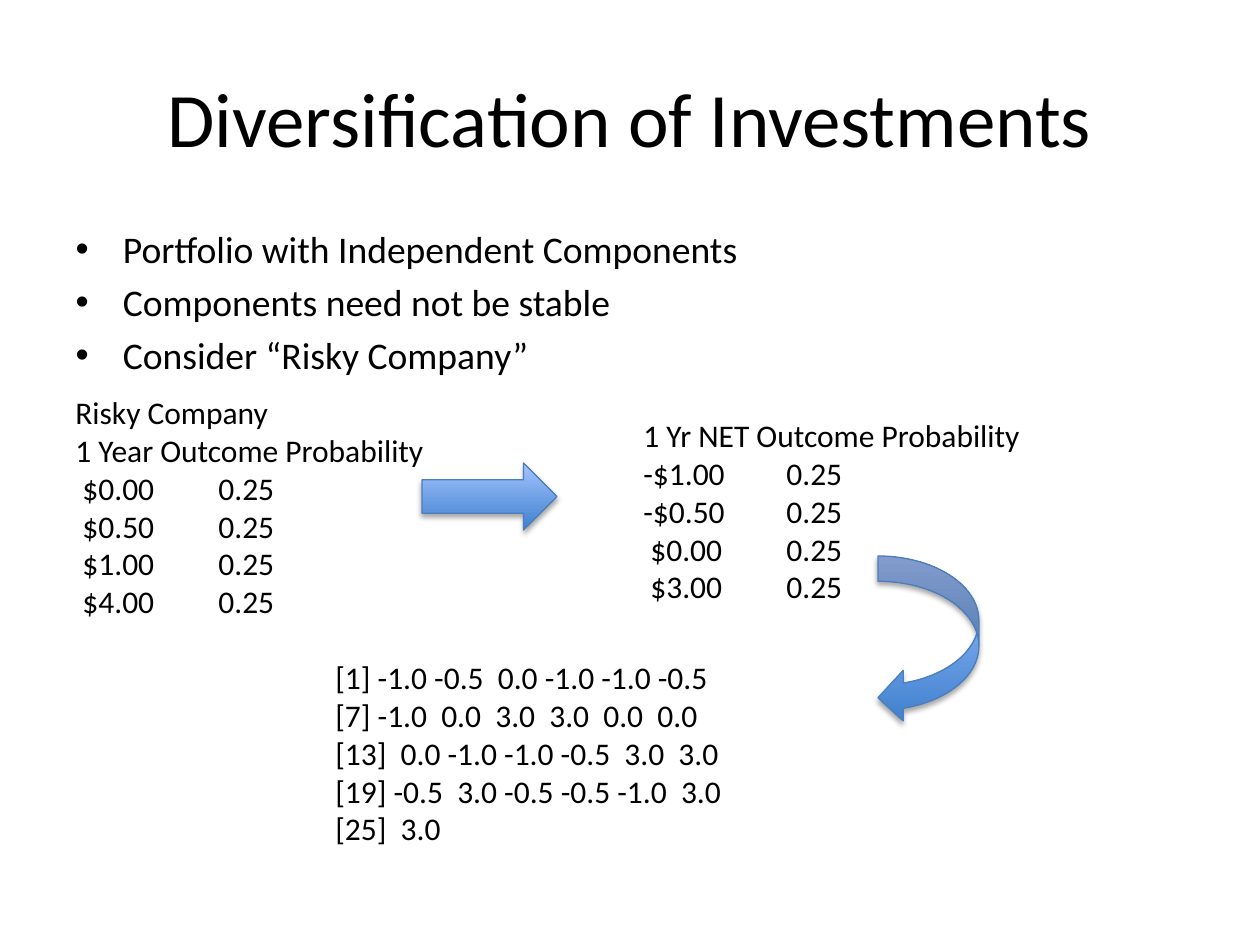
from lxml.etree import SubElement
from pptx import Presentation
from pptx.dml.color import RGBColor
from pptx.enum.shapes import MSO_SHAPE as SHAPE
from pptx.enum.text import MSO_AUTO_SIZE as AUTO
from pptx.oxml.ns import qn
from pptx.util import Emu, Pt

FONT, BLACK = "Calibri", "000000"
ARROW_LIGHT, ARROW_DARK, ARROW_LINE = "A4C4FF", "3F80CE", "4B7EBC"
TAB_POS = 143  # probability column, from the text's left edge

TITLE = "Diversification of Investments"
BULLETS = [
    "Portfolio with Independent Components",
    "Components need not be stable",
    "Consider “Risky Company”",
]
# left, top, width, height in px, then the lines
TEXTS = [
    ((63, 387, 377, 280), [
        "Risky Company",
        "1 Year Outcome Probability",
        " $0.00\t0.25",
        " $0.50\t0.25",
        " $1.00\t0.25",
        " $4.00\t0.25",
    ]),
    ((631, 410, 406, 242), [
        "1 Yr NET Outcome Probability",
        "-$1.00\t0.25",
        "-$0.50\t0.25",
        " $0.00\t0.25",
        " $3.00\t0.25",
    ]),
    ((323, 652, 416, 242), [
        "[1] -1.0 -0.5  0.0 -1.0 -1.0 -0.5",
        "[7] -1.0  0.0  3.0  3.0  0.0  0.0",
        "[13]  0.0 -1.0 -1.0 -0.5  3.0  3.0",
        "[19] -0.5  3.0 -0.5 -0.5 -1.0  3.0",
        "[25]  3.0",
    ]),
]
ARROWS = [
    (SHAPE.RIGHT_ARROW, (422, 463, 135, 67)),
    (SHAPE.CURVED_LEFT_ARROW, (878, 556, 101, 167)),
]


def px(n):
    return Emu(round(n * 914400 / 126))


def rgb(value):
    return RGBColor.from_string(value)


def place(sp, box):
    sp.left, sp.top, sp.width, sp.height = map(px, box)


def write(tf, lines, size):
    """Fill a text frame with one paragraph per line."""
    tf.word_wrap = True
    tf.auto_size = AUTO.NONE
    for i, line in enumerate(lines):
        p = tf.paragraphs[0] if i == 0 else tf.add_paragraph()
        p.text = line
        if "\t" in line:
            tabs = SubElement(p._p.get_or_add_pPr(), qn("a:tabLst"))
            SubElement(tabs, qn("a:tab"), pos=str(px(TAB_POS)), algn="l")
        p.font.name, p.font.size = FONT, Pt(size)
        p.font.color.rgb = rgb(BLACK)
    tf.paragraphs[0].space_before = Pt(0)


def add_arrow(shapes, kind, box):
    sp = shapes.add_shape(kind, *map(px, box))
    sp.fill.gradient()
    sp.fill.gradient_angle = 90
    for stop, color in zip(sp.fill.gradient_stops, (ARROW_DARK, ARROW_LIGHT)):
        stop.color.rgb = rgb(color)
    for stop, position in zip(sp.fill.gradient_stops, (0, 1)):
        stop.position = position
    sp.line.color.rgb = rgb(ARROW_LINE)
    sp.line.width = Pt(0.75)
    sp.shadow.inherit = False
    effects = sp._element.spPr.find(qn("a:effectLst"))
    shadow = SubElement(effects, qn("a:outerShdw"), blurRad=str(Pt(3.1)),
                        dist=str(Pt(1.8)), dir=str(90 * 60000), rotWithShape="0")
    color = SubElement(shadow, qn("a:srgbClr"), val=BLACK)
    SubElement(color, qn("a:alpha"), val="35000")


def main():
    prs = Presentation()
    prs.slide_width, prs.slide_height = px(1260), px(945)
    slide = prs.slides.add_slide(prs.slide_layouts[1])
    title, body = slide.placeholders
    place(title, (63, 38, 1134, 157))
    write(title.text_frame, [TITLE], 44)
    place(body, (63, 220, 1134, 167))
    write(body.text_frame, BULLETS, 21.5)
    for box, lines in TEXTS:
        write(slide.shapes.add_textbox(*map(px, box)).text_frame, lines, 18)
    for kind, box in ARROWS:
        add_arrow(slide.shapes, kind, box)
    prs.save("out.pptx")


if __name__ == "__main__":
    main()
